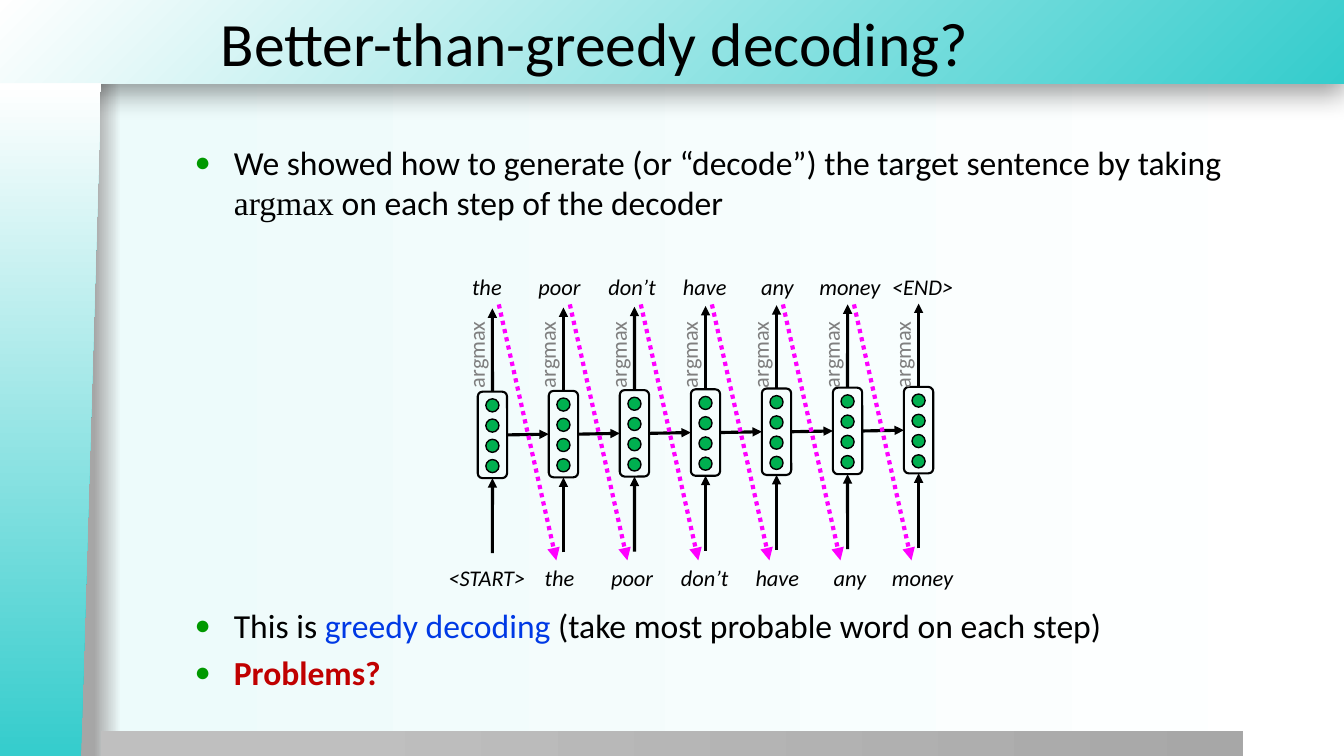
import dataclasses

import lxml.etree
import pptx
import pptx.dml.color
import pptx.enum.dml
import pptx.enum.shapes
import pptx.enum.text
import pptx.oxml.ns
import pptx.util

Cm, Pt = pptx.util.Cm, pptx.util.Pt
qn = pptx.oxml.ns.qn
SHAPE = pptx.enum.shapes.MSO_SHAPE
ALIGN = pptx.enum.text.PP_ALIGN


@dataclasses.dataclass(frozen=True)
class Theme:
    font: str = "Calibri"
    math_font: str = "Times New Roman"
    title_size: int = 44
    body_size: int = 24
    label_size: int = 16
    ink: str = "000000"
    muted: str = "7F7F7F"
    teal: str = "34CCCC"
    white: str = "FFFFFF"
    bullet: str = "009900"
    neuron: str = "00B050"
    feedback: str = "FF00FF"
    term: str = "0039E5"
    alert: str = "C00000"


def rgb(value):
    return pptx.dml.color.RGBColor.from_string(value)


def child(parent, tag, **attributes):
    element = lxml.etree.SubElement(parent, qn(tag))
    for key, value in attributes.items():
        element.set(key, str(value))
    return element


class DecoderSlide:
    def __init__(self, slide, theme):
        self.slide, self.theme = slide, theme

    def set_font(self, font, size, color=None, italic=None):
        font.name, font.size, font.italic = self.theme.font, Pt(size), italic
        font.color.rgb = rgb(color or self.theme.ink)

    def gradient(self, fill, owner, stops, corner=False):
        fill.gradient()
        grad = owner.find(".//" + qn("a:gradFill"))
        for old in list(grad):
            grad.remove(old)
        stop_list = child(grad, "a:gsLst")
        for percent, color in stops:
            stop = child(stop_list, "a:gs", pos=percent * 1000)
            child(stop, "a:srgbClr", val=color)
        if corner:
            focus = child(grad, "a:path", path="circle")
            child(focus, "a:fillToRect", l=100000, t=100000)
        else:
            child(grad, "a:lin", ang=0, scaled=0)

    def background(self, stops):
        self.gradient(self.slide.background.fill, self.slide._element, stops)

    def shape(self, kind, left, top, width, height):
        shape = self.slide.shapes.add_shape(
            kind, Cm(left), Cm(top), Cm(width), Cm(height))
        shape.shadow.inherit = False
        shape.fill.background()
        shape.line.fill.background()
        return shape

    def panel(self, kind, box, stops, corner=False):
        panel = self.shape(kind, *box)
        self.gradient(panel.fill, panel._element, stops, corner)
        return panel

    def drop_shadow(self, shape):
        effects = shape._element.spPr.find(qn("a:effectLst"))
        shadow = child(effects, "a:outerShdw", blurRad=Pt(20), dist=Pt(6),
                       dir=5400000, algn="t", rotWithShape=0)
        child(child(shadow, "a:srgbClr", val=self.theme.ink), "a:alpha", val=40000)

    def outline(self, shape, width):
        shape.line.color.rgb = rgb(self.theme.ink)
        shape.line.width = Pt(width)

    def cell(self, left, top):
        """One decoder state: a rounded box holding four neurons."""
        cell = self.shape(SHAPE.ROUNDED_RECTANGLE, left, top, CELL_W, CELL_H)
        self.outline(cell, 1.5)
        for row in range(4):
            neuron = self.shape(SHAPE.OVAL, left + (CELL_W - NEURON) / 2,
                                top + 0.18 + 0.51 * row, NEURON, NEURON)
            neuron.fill.solid()
            neuron.fill.fore_color.rgb = rgb(self.theme.neuron)
            self.outline(neuron, 1)
        return cell

    def arrow(self, start, end, color=None, width=2.25, dotted=False):
        arrow = self.slide.shapes.add_connector(
            pptx.enum.shapes.MSO_CONNECTOR.STRAIGHT, *map(Cm, start + end))
        arrow.line.color.rgb = rgb(color or self.theme.ink)
        arrow.line.width = Pt(width)
        if dotted:
            arrow.line.dash_style = pptx.enum.dml.MSO_LINE.ROUND_DOT
        child(arrow.line._get_or_add_ln(), "a:tailEnd", type="triangle")
        child(arrow._element.spPr, "a:effectLst")
        return arrow

    def label(self, text, box, color=None, italic=None, wrap=True):
        label = self.slide.shapes.add_textbox(*map(Cm, box))
        label.text_frame.word_wrap = wrap
        line = label.text_frame.paragraphs[0]
        line.text = text
        self.set_font(line.font, self.theme.label_size, color, italic)
        return label

    def word_row(self, words, top):
        """Words centred on evenly spaced tab stops, one per decoder step."""
        row = self.label("".join("\t" + word for word in words),
                         (10.6, top, 14.6, 0.94), italic=True)
        properties = row.text_frame.paragraphs[0]._p.get_or_add_pPr()
        tabs = lxml.etree.Element(qn("a:tabLst"))
        properties.insert(0, tabs)
        for step in range(len(words)):
            child(tabs, "a:tab", pos=Cm(1.42 + 1.83 * step), algn="ctr")

    def place(self, holder, left, top, width, height):
        holder.left, holder.top = Cm(left), Cm(top)
        holder.width, holder.height = Cm(width), Cm(height)
        self.slide.shapes._spTree.append(holder._element)
        holder.text_frame.word_wrap = True
        holder.text_frame.auto_size = pptx.enum.text.MSO_AUTO_SIZE.NONE

    def title(self, text, box):
        title = self.slide.shapes.title
        self.place(title, *box)
        title.text_frame.vertical_anchor = pptx.enum.text.MSO_ANCHOR.MIDDLE
        heading = title.text_frame.paragraphs[0]
        heading.text = text
        heading.alignment = ALIGN.LEFT
        self.set_font(heading.font, self.theme.title_size)

    def bullets(self, items, box):
        """Each item is (space before, [(text, font changes), ...])."""
        body = self.slide.placeholders[1]
        self.place(body, *box)
        frame = body.text_frame
        for index, (space, parts) in enumerate(items):
            point = frame.add_paragraph() if index else frame.paragraphs[0]
            properties = point._p.get_or_add_pPr()
            properties.set("marL", str(Cm(0.99)))
            properties.set("indent", str(-Cm(0.99)))
            child(child(properties, "a:buClr"), "a:srgbClr", val=self.theme.bullet)
            child(properties, "a:buSzPct", val=80000)
            child(properties, "a:buChar", char="●")
            point.space_before = Pt(space)
            for text, changes in parts:
                run = point.add_run()
                run.text = text
                self.set_font(run.font, self.theme.body_size, changes.get("color"))
                run.font.name = changes.get("font", self.theme.font)
                run.font.bold = changes.get("bold")


# Decoder geometry in centimetres
CELL_W, CELL_H, NEURON = 0.74, 2.18, 0.33
PITCH, RISE = 1.79, 0.02
INPUTS = ["<START>", "the", "poor", "don’t", "have", "any", "money"]
OUTPUTS = INPUTS[1:] + ["<END>"]


def main():
    theme = Theme()
    deck = pptx.Presentation()
    deck.slide_width, deck.slide_height = Cm(33.87), Cm(19.05)
    page = DecoderSlide(deck.slides.add_slide(deck.slide_layouts[1]), theme)

    # Backdrop
    page.background([(7, "A6A6A6"), (9, "EDFBFB"), (100, theme.white)])
    teal_fade = [(0, theme.teal), (100, theme.white)]
    banner = page.panel(SHAPE.RECTANGLE, (0, 0, 33.87, 2.11), teal_fade, corner=True)
    page.drop_shadow(banner)
    page.panel(SHAPE.RECTANGLE, (2.54, 18.42, 28.78, 0.66),
               [(20, "BFBFBF"), (100, "A7A7A7")])
    side = page.panel(SHAPE.FLOWCHART_MANUAL_INPUT, (-7.21, 9.32, 16.97, 2.54), teal_fade)
    side.rotation = 270
    side._element.spPr.find(qn("a:xfrm")).set("flipV", "1")

    # Title and points
    page.title("Better-than-greedy decoding?", (5.31, 0, 28.56, 2.11))
    page.bullets([
        (4.8, [("We showed how to generate (or “decode”) the target sentence by taking ", {}),
               ("argmax", {"font": theme.math_font}),
               (" on each step of the decoder", {})]),
        (273, [("This is ", {}), ("greedy decoding", {"color": theme.term}),
               (" (take most probable word on each step)", {})]),
        (4.8, [("Problems?", {"color": theme.alert, "bold": True})]),
    ], (4.65, 3.45, 26.67, 14.71))

    # Decoder steps
    page.word_row(INPUTS, 14.1)
    page.word_row(OUTPUTS, 6.76)
    previous = None
    for step in range(len(INPUTS)):
        shift, rise = PITCH * step, RISE * step
        left, top = 12.04 + shift, 9.87 - rise
        middle = left + CELL_W / 2
        cell = page.cell(left, top)
        page.arrow((middle, 13.94 - rise), (middle, top + CELL_H)).end_connect(cell, 2)
        page.arrow((middle, top), (middle, 7.77 - rise)).begin_connect(cell, 0)
        if previous is not None:
            link = page.arrow((left - PITCH + CELL_W, top), (left, top))
            link.begin_connect(previous, 3)
            link.end_connect(cell, 1)
        argmax = page.label("argmax", (10.9 + shift, 8.46, 2.2, 0.94),
                            theme.muted, wrap=False)
        argmax.rotation = 270
        previous = cell

    # Each output word feeds the next step
    for step in range(len(INPUTS) - 1):
        start = 12.57 + PITCH * step
        page.arrow((start, 7.67), (start + 1.45, 14.12), theme.feedback, 3, dotted=True)

    deck.save("out.pptx")


if __name__ == "__main__":
    main()
